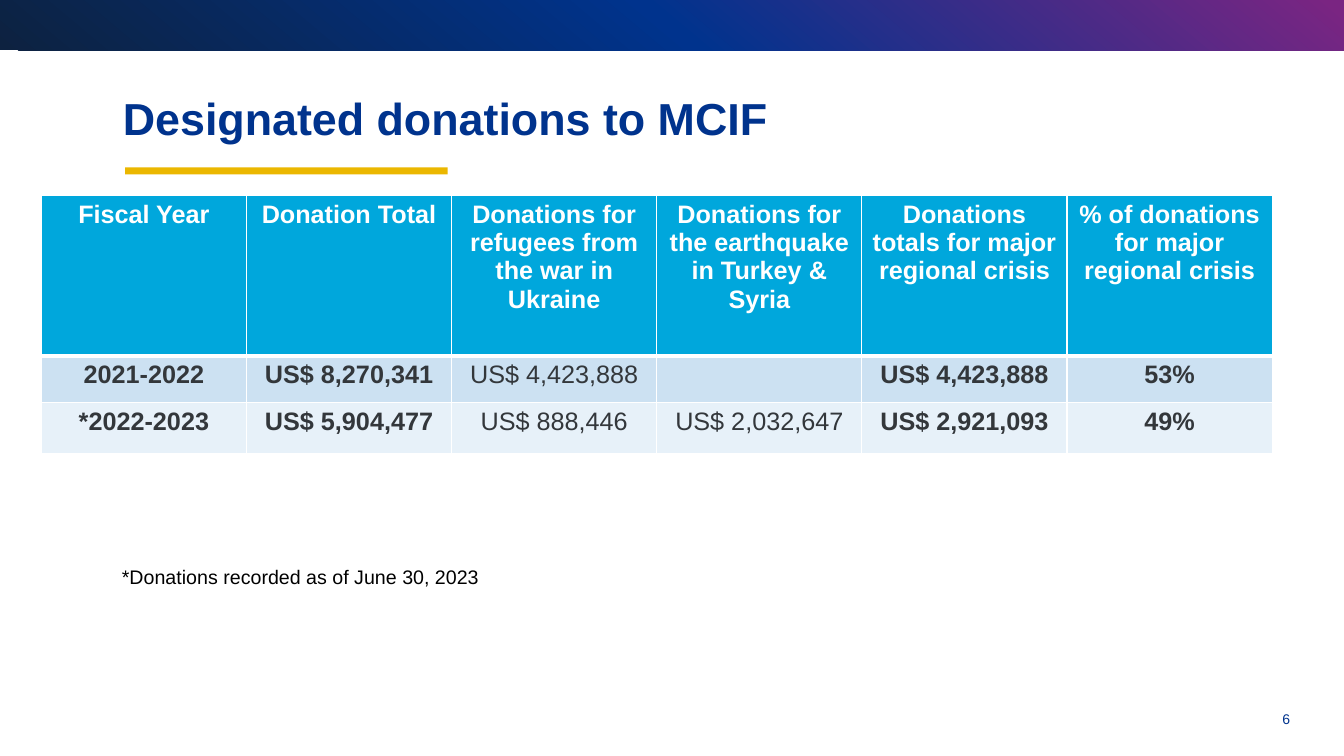
import pptx
import pptx.dml.color
import pptx.enum.shapes
import pptx.enum.text
import pptx.oxml
import pptx.oxml.ns
import pptx.util
from lxml import etree

Inches = pptx.util.Inches
ALIGN = pptx.enum.text.PP_ALIGN
ANCHOR = pptx.enum.text.MSO_ANCHOR
RECTANGLE = pptx.enum.shapes.MSO_SHAPE.RECTANGLE
FONT = "Arial"
COLORS = {
    "navy": "0D2240", "blue": "00338D", "purple": "7A2582", "gold": "EBB700",
    "header": "00A7DC", "band_dark": "CCE1F2", "band_light": "E7F1F9",
    "body": "33373B", "white": "FFFFFF", "black": "000000",
}
HEADINGS = [
    "Fiscal Year",
    "Donation Total",
    "Donations for refugees from the war in Ukraine",
    "Donations for the earthquake in Turkey & Syria",
    "Donations totals for major regional crisis",
    "% of donations for major regional crisis",
]
YEARS = [
    ["2021-2022", "US$ 8,270,341", "US$ 4,423,888", "", "US$ 4,423,888", "53%"],
    ["*2022-2023", "US$ 5,904,477", "US$ 888,446", "US$ 2,032,647", "US$ 2,921,093", "49%"],
]
PLAIN_COLUMNS = (2, 3)
ROW_HEIGHTS = [1.59, 0.46, 0.51]
ROW_FILLS = ["header", "band_dark", "band_light"]


def rgb(name):
    return pptx.dml.color.RGBColor.from_string(COLORS[name])


def add_run(paragraph, text, size, color, bold=False):
    run = paragraph.add_run()
    run.text = text
    run.font.name = FONT
    run.font.size = pptx.util.Pt(size)
    run.font.bold = bold
    run.font.color.rgb = rgb(color)


def add_label(slide, box, text, size, color, bold=False, anchor=ANCHOR.MIDDLE):
    frame = slide.shapes.add_textbox(*map(Inches, box)).text_frame
    frame.word_wrap = True
    frame.vertical_anchor = anchor
    add_run(frame.paragraphs[0], text, size, color, bold)
    return frame.paragraphs[0]


def add_bar(slide, box):
    bar = slide.shapes.add_shape(RECTANGLE, *map(Inches, box))
    bar.shadow.inherit = False
    bar.line.fill.background()
    return bar


def add_banner(slide, box):
    banner = add_bar(slide, box)
    banner.fill.gradient()
    banner.fill.gradient_angle = 50
    # Three stops replace the two default ones
    stops = banner.fill._fill._gradFill.find(pptx.oxml.ns.qn("a:gsLst"))
    for stop in list(stops):
        stops.remove(stop)
    for percent, name in [(0, "navy"), (50, "blue"), (99, "purple")]:
        stop = etree.SubElement(stops, pptx.oxml.ns.qn("a:gs"), pos=str(percent * 1000))
        etree.SubElement(stop, pptx.oxml.ns.qn("a:srgbClr"), val=COLORS[name])


def add_heading(slide, box):
    left, top, width, height = box
    title = add_label(slide, box, "Designated donations to MCIF", 32, "blue", bold=True)
    title.line_spacing = 0.9
    underline = add_bar(slide, (left + 0.12, top + 0.75, 3.2, 0.07))
    underline.fill.solid()
    underline.fill.fore_color.rgb = rgb("gold")


def set_borders(cell, widths):
    for side, points in widths.items():
        border = pptx.oxml.parse_xml(
            f'<a:ln{side} {pptx.oxml.ns.nsdecls("a")} w="{pptx.util.Pt(points)}">'
            f'<a:solidFill><a:srgbClr val="{COLORS["white"]}"/></a:solidFill></a:ln{side}>')
        cell._tc.get_or_add_tcPr().append(border)


def add_donations(slide, box):
    rows = [HEADINGS] + YEARS
    table = slide.shapes.add_table(len(rows), len(HEADINGS), *map(Inches, box)).table
    for column in table.columns:
        column.width = Inches(box[2] / len(HEADINGS))
    for r, values in enumerate(rows):
        table.rows[r].height = Inches(ROW_HEIGHTS[r])
        is_header = r == 0
        for c, value in enumerate(values):
            cell = table.cell(r, c)
            set_borders(cell, {"L": 1, "R": 1, "T": 3 if r == 1 else 1, "B": 3 if is_header else 1})
            cell.fill.solid()
            cell.fill.fore_color.rgb = rgb(ROW_FILLS[r])
            paragraph = cell.text_frame.paragraphs[0]
            paragraph.alignment = ALIGN.CENTER
            if value:
                add_run(paragraph, value, 18, "white" if is_header else "body",
                        is_header or c not in PLAIN_COLUMNS)


def main():
    deck = pptx.Presentation()
    deck.slide_width, deck.slide_height = Inches(13.33), Inches(7.5)
    slide = deck.slides.add_slide(deck.slide_layouts[6])

    # Top band and title
    add_banner(slide, (0, 0, 13.33, 0.5))
    add_heading(slide, (1.12, 0.91, 9.16, 0.58))
    # Donation figures and their footnote
    add_donations(slide, (0.41, 1.94, 12.21, 2.56))
    add_label(slide, (1.11, 5.52, 11.11, 0.4), "*Donations recorded as of June 30, 2023", 14, "black")
    # Page number
    add_label(slide, (12.62, 7, 0.71, 0.5), "6", 10, "blue", anchor=ANCHOR.TOP)

    deck.save("out.pptx")


if __name__ == "__main__":
    main()
